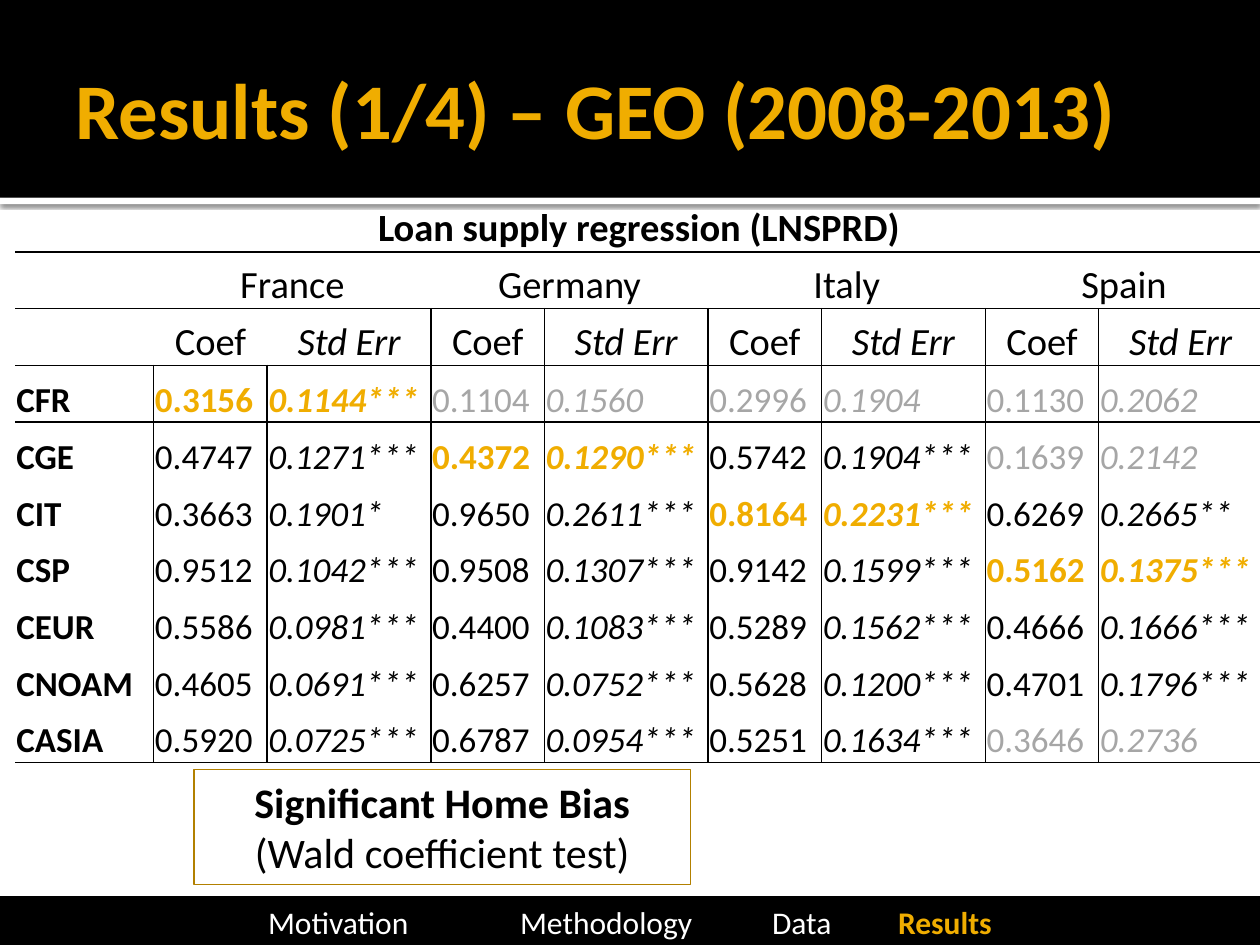
"""Build the slide with the GEO loan supply regression results for 2008-2013."""
from dataclasses import dataclass

from lxml.etree import SubElement
from pptx import Presentation
from pptx.dml.color import RGBColor as RGB
from pptx.enum.shapes import MSO_SHAPE as SHAPE
from pptx.enum.text import MSO_ANCHOR as ANCHOR, MSO_AUTO_SIZE as AUTO, PP_ALIGN as ALIGN
from pptx.oxml import parse_xml
from pptx.oxml.ns import nsdecls, qn
from pptx.util import Pt

PX = 9144


@dataclass(frozen=True)
class Theme:
    font: str = "Calibri"
    ink: str = "000000"
    paper: str = "FFFFFF"
    accent: str = "F0AD00"
    muted: str = "A6A6A6"
    frame: str = "B28000"
    title: int = 45
    note: int = 24
    heading: int = 22
    body: int = 20
    nav: int = 18


theme = Theme()


def add_run(paragraph, text, size, color, bold=False, italic=False):
    run = paragraph.add_run()
    run.text = text
    font = run.font
    font.name, font.size, font.bold, font.italic = theme.font, Pt(size), bold, italic
    font.color.rgb = RGB.from_string(color)


def add_box(left, top, width, height, fill=None, line=None, weight=0.75):
    box = slide.shapes.add_shape(SHAPE.RECTANGLE, left * PX, top * PX, width * PX, height * PX)
    box.shadow.inherit = False
    if fill:
        box.fill.solid()
        box.fill.fore_color.rgb = RGB.from_string(fill)
    else:
        box.fill.background()
    if line:
        box.line.color.rgb = RGB.from_string(line)
        box.line.width = Pt(weight)
    else:
        box.line.fill.background()
    return box


prs = Presentation()
prs.slide_width, prs.slide_height = 1000 * PX, 750 * PX
slide = prs.slides.add_slide(prs.slide_layouts[5])

divider = add_box(0, 157, 1000, 5, theme.paper)
effects = divider.element.spPr.find(qn("a:effectLst"))
effects.append(parse_xml(
    f'<a:outerShdw {nsdecls("a")} blurRad="{Pt(2.5)}" dist="{Pt(0.8)}" dir="5400000" rotWithShape="0">'
    f'<a:srgbClr val="{theme.ink}"><a:alpha val="60000"/></a:srgbClr></a:outerShdw>'))
add_box(0, 0, 1000, 157, theme.ink)

countries = ["France", "Germany", "Italy", "Spain"]
results = [
    "CFR 0.3156 0.1144*** 0.1104 0.1560 0.2996 0.1904 0.1130 0.2062",
    "CGE 0.4747 0.1271*** 0.4372 0.1290*** 0.5742 0.1904*** 0.1639 0.2142",
    "CIT 0.3663 0.1901* 0.9650 0.2611*** 0.8164 0.2231*** 0.6269 0.2665**",
    "CSP 0.9512 0.1042*** 0.9508 0.1307*** 0.9142 0.1599*** 0.5162 0.1375***",
    "CEUR 0.5586 0.0981*** 0.4400 0.1083*** 0.5289 0.1562*** 0.4666 0.1666***",
    "CNOAM 0.4605 0.0691*** 0.6257 0.0752*** 0.5628 0.1200*** 0.4701 0.1796***",
    "CASIA 0.5920 0.0725*** 0.6787 0.0954*** 0.5251 0.1634*** 0.3646 0.2736",
]
col_widths = [110] + [90, 130] * len(countries)
row_count = len(results) + 3
regression = slide.shapes.add_table(
    row_count, len(col_widths), 12 * PX, 155 * PX, sum(col_widths) * PX, row_count * 45 * PX).table
regression.first_row = regression.horz_banding = False
regression._tbl.tblPr.find(qn("a:tableStyleId")).text = "{2D5ABB26-0587-4C30-8999-92F81FD0307C}"
for column, width in zip(regression.columns, col_widths):
    column.width = width * PX

rules_below = {0: 1, 1: 1, 2: 1, row_count - 1: 0.5}
first_ruled_row = {0: 3, 2: 2, 4: 2, 6: 2}
for r in range(row_count):
    regression.rows[r].height = 45 * PX
    for c in range(len(col_widths)):
        cell = regression.cell(r, c)
        cell.vertical_anchor = ANCHOR.BOTTOM
        cell.margin_left = cell.margin_right = cell.margin_top = PX
        cell.margin_bottom = 0
        borders = {
            "a:lnL": int(r >= first_ruled_row.get(c - 1, row_count)),
            "a:lnR": int(r >= first_ruled_row.get(c, row_count)),
            "a:lnT": rules_below.get(r - 1, 0),
            "a:lnB": rules_below.get(r, 0),
        }
        for edge, weight in borders.items():
            if weight:
                border = SubElement(cell._tc.get_or_add_tcPr(), qn(edge), w=str(Pt(weight)))
                ink = SubElement(border, qn("a:solidFill"))
                SubElement(ink, qn("a:srgbClr"), val=theme.ink)
        cell.fill.background()

headings = [(0, 0, 8, "Loan supply regression (LNSPRD)", True, False)]
for i, country in enumerate(countries):
    coef = 1 + 2 * i
    headings += [(1, coef, 1, country, False, False),
                 (2, coef, 0, "Coef", False, False),
                 (2, coef + 1, 0, "Std Err", False, True)]
for r, c, extra, text, bold, italic in headings:
    cell = regression.cell(r, c)
    if extra:
        cell.merge(regression.cell(r, c + extra))
    heading = cell.text_frame.paragraphs[0]
    heading.alignment = ALIGN.CENTER
    add_run(heading, text, theme.heading, theme.ink, bold, italic)

for r, result in enumerate(results):
    label, *values = result.split()
    add_run(regression.cell(r + 3, 0).text_frame.paragraphs[0], label, theme.body, theme.ink, True)
    for c, value in enumerate(values):
        home = c // 2 == r
        significant = "*" in values[c // 2 * 2 + 1]
        color = theme.accent if home else theme.ink if significant else theme.muted
        add_run(regression.cell(r + 3, c + 1).text_frame.paragraphs[0],
                value, theme.body, color, home, c % 2 == 1)

title = slide.shapes.title
slide.shapes._spTree.append(title.element)
title.left, title.top, title.width, title.height = 50 * PX, 17 * PX, 900 * PX, 137 * PX
title_frame = title.text_frame
title_frame.word_wrap = True
title_frame.auto_size = AUTO.NONE
title_frame.vertical_anchor = ANCHOR.MIDDLE
title_frame.margin_left = 10 * PX
title_frame.margin_right = title_frame.margin_top = title_frame.margin_bottom = 5 * PX
title_frame.paragraphs[0].alignment = ALIGN.LEFT
add_run(title_frame.paragraphs[0], "Results (1/4) – GEO (2008-2013)", theme.title, theme.accent, True)

home_bias = add_box(154, 611, 394, 91, line=theme.frame).text_frame
home_bias.word_wrap = True
home_bias.auto_size = AUTO.SHAPE_TO_FIT_TEXT
home_bias.vertical_anchor = ANCHOR.TOP
finding, test = home_bias.paragraphs[0], home_bias.add_paragraph()
finding.alignment = test.alignment = ALIGN.CENTER
add_run(finding, "Significant Home Bias", theme.note, theme.ink, True)
add_run(test, "(Wald coefficient test)", theme.note, theme.ink)

navigation = add_box(0, 714, 1000, 36, theme.ink, theme.ink, 3.78).text_frame
navigation.word_wrap = True
navigation.vertical_anchor = ANCHOR.MIDDLE
sections = navigation.paragraphs[0]
sections.alignment = ALIGN.CENTER
add_run(sections, "Motivation\t\tMethodology\t\tData\t\t", theme.nav, theme.paper)
add_run(sections, "Results", theme.nav, theme.accent, True)

prs.save("out.pptx")
